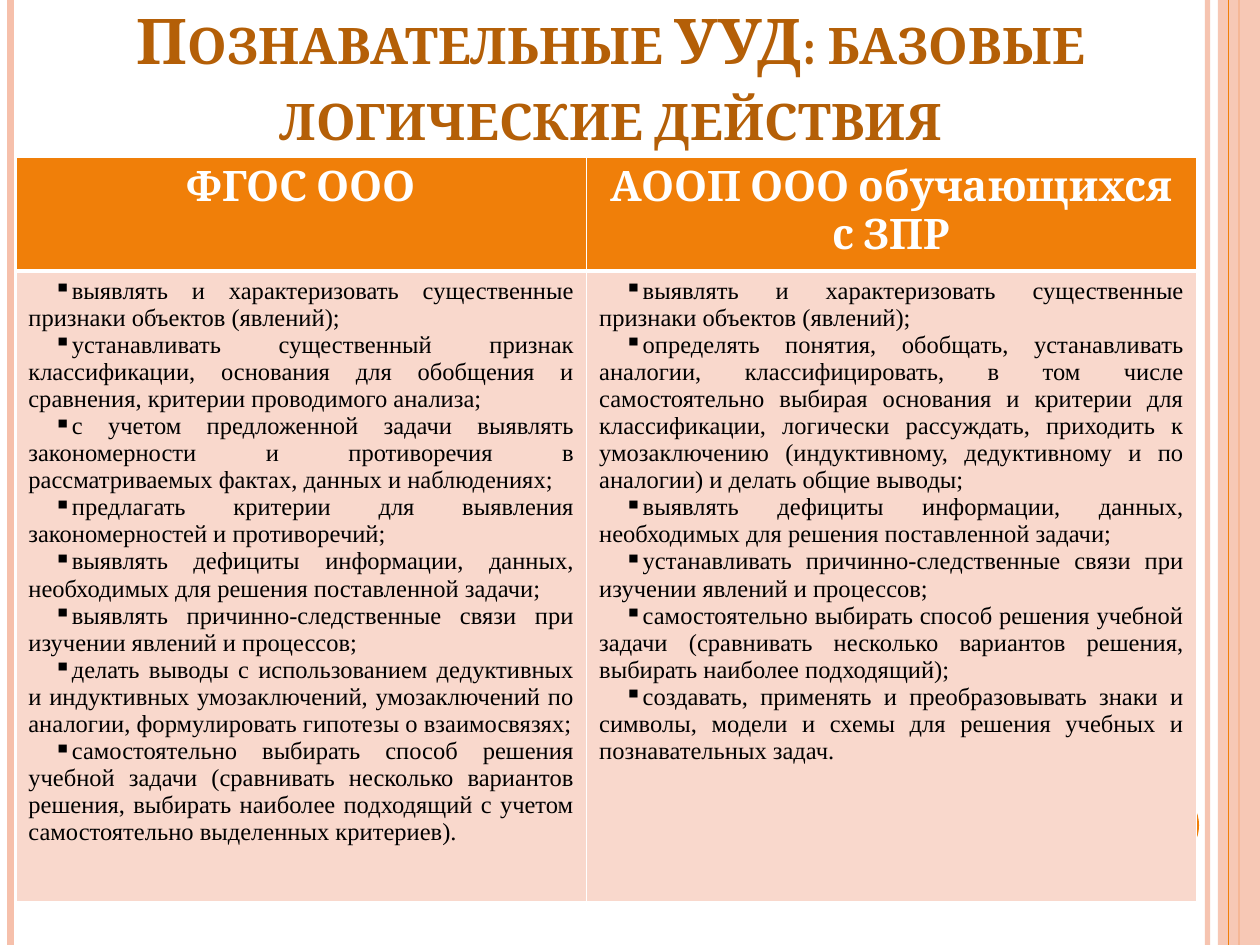
from lxml import etree
from pptx import Presentation
from pptx.dml.color import RGBColor
from pptx.enum.shapes import MSO_CONNECTOR, MSO_SHAPE
from pptx.enum.text import MSO_ANCHOR, PP_ALIGN
from pptx.oxml.ns import qn
from pptx.util import Pt

CENTER, JUSTIFY = PP_ALIGN.CENTER, PP_ALIGN.JUSTIFY
BOTTOM = MSO_ANCHOR.BOTTOM
STRAIGHT = MSO_CONNECTOR.STRAIGHT
RECTANGLE, OVAL = MSO_SHAPE.RECTANGLE, MSO_SHAPE.OVAL

WIDTH, HEIGHT = 720, 540
ORANGE, PEACH, PALE = "F07F09", "F6C0AB", "F9D8CC"
BROWN, WHITE, BLACK = "B45F07", "FFFFFF", "000000"
HEAD_FONT, BODY_FONT = "Cambria", "Times New Roman"

TITLE = "Познавательные УУД: базовые логические действия"
COLUMNS = [
    ("ФГОС ООО", 326.2, [
        "выявлять и характеризовать существенные признаки объектов (явлений);",
        "устанавливать существенный признак классификации, основания для обобщения и "
        "сравнения, критерии проводимого анализа;",
        "с учетом предложенной задачи выявлять закономерности и противоречия в "
        "рассматриваемых фактах, данных и наблюдениях;",
        "предлагать критерии для выявления закономерностей и противоречий;",
        "выявлять дефициты информации, данных, необходимых для решения поставленной задачи;",
        "выявлять причинно-следственные связи при изучении явлений и процессов;",
        "делать выводы с использованием дедуктивных и индуктивных умозаключений, "
        "умозаключений по аналогии, формулировать гипотезы о взаимосвязях;",
        "самостоятельно выбирать способ решения учебной задачи (сравнивать несколько "
        "вариантов решения, выбирать наиболее подходящий с учетом самостоятельно "
        "выделенных критериев).",
    ]),
    ("АООП ООО обучающихся с ЗПР", 348.5, [
        "выявлять и характеризовать существенные признаки объектов (явлений);",
        "определять понятия, обобщать, устанавливать аналогии, классифицировать, в том "
        "числе самостоятельно выбирая основания и критерии для классификации, логически "
        "рассуждать, приходить к умозаключению (индуктивному, дедуктивному и по аналогии) "
        "и делать общие выводы;",
        "выявлять дефициты информации, данных, необходимых для решения поставленной задачи;",
        "устанавливать причинно-следственные связи при изучении явлений и процессов;",
        "самостоятельно выбирать способ решения учебной задачи (сравнивать несколько "
        "вариантов решения, выбирать наиболее подходящий);",
        "создавать, применять и преобразовывать знаки и символы, модели и схемы для "
        "решения учебных и познавательных задач.",
    ]),
]
ROW_HEIGHTS = (61.7, 360)
TABLE_LEFT, TABLE_TOP = 9, 90


def color(value):
    return RGBColor.from_string(value)


def set_opacity(element, percent):
    for tag in element.iter(qn("a:srgbClr")):
        etree.SubElement(tag, qn("a:alpha"), val=str(percent * 1000))


def add_stripe(x, hue, weight, opacity=None):
    """Draw a vertical line over the full slide height."""
    stripe = slide.shapes.add_connector(STRAIGHT, Pt(x), 0, Pt(x), Pt(HEIGHT))
    stripe.line.color.rgb = color(hue)
    stripe.line.width = Pt(weight)
    properties = stripe._element.spPr
    if opacity:
        set_opacity(properties, opacity)
    etree.SubElement(properties, qn("a:effectLst"))


def add_plain_shape(kind, left, top, width, height, hue):
    shape = slide.shapes.add_shape(kind, Pt(left), Pt(top), Pt(width), Pt(height))
    shape.shadow.inherit = False
    shape.fill.solid()
    shape.fill.fore_color.rgb = color(hue)
    shape.line.fill.background()
    return shape


def add_span(para, text, font, size, hue, bold):
    span = para.add_run()
    span.text = text
    span.font.name, span.font.size, span.font.bold = font, Pt(size), bold
    span.font.color.rgb = color(hue)
    return span


def style_cell(cell, fill, top, bottom):
    """Give a cell white borders, then its fill."""
    properties = cell._tc.get_or_add_tcPr()
    for side, weight in (("L", 1), ("R", 1), ("T", top), ("B", bottom)):
        border = etree.SubElement(properties, qn(f"a:ln{side}"), w=str(Pt(weight)))
        paint = etree.SubElement(border, qn("a:solidFill"))
        etree.SubElement(paint, qn("a:srgbClr"), val=WHITE)
    cell.fill.solid()
    cell.fill.fore_color.rgb = color(fill)


def add_bullet(para, indent):
    properties = para._p.get_or_add_pPr()
    properties.set("marL", "0")
    properties.set("indent", str(Pt(indent)))
    etree.SubElement(properties, qn("a:buChar"), char="▪")


deck = Presentation()
deck.slide_width, deck.slide_height = Pt(WIDTH), Pt(HEIGHT)
slide = deck.slides.add_slide(deck.slide_layouts[6])

add_stripe(690, PEACH, 3, 93)
add_stripe(6, PEACH, 4.5)
add_stripe(708, ORANGE, 1.5)
band = add_plain_shape(RECTANGLE, 696, 0, 24, HEIGHT, PEACH)
set_opacity(band._element.spPr, 87)
add_stripe(702, ORANGE, 0.75)
add_plain_shape(OVAL, 642, 450, 43.2, 43.2, ORANGE)

title_box = slide.shapes.add_textbox(Pt(9), Pt(1), Pt(680), Pt(90))
title_frame = title_box.text_frame
title_frame.word_wrap = True
title_frame.vertical_anchor = BOTTOM
title_para = title_frame.paragraphs[0]
title_para.alignment = CENTER
title_span = add_span(title_para, TITLE, HEAD_FONT, 36, BROWN, True)
title_span._r.get_or_add_rPr().set("cap", "small")

table = slide.shapes.add_table(
    len(ROW_HEIGHTS), len(COLUMNS), Pt(TABLE_LEFT), Pt(TABLE_TOP),
    Pt(sum(width for _, width, _ in COLUMNS)), Pt(sum(ROW_HEIGHTS))).table
for row, height in zip(table.rows, ROW_HEIGHTS):
    row.height = Pt(height)
for index, (heading, width, actions) in enumerate(COLUMNS):
    table.columns[index].width = Pt(width)
    head, body = table.cell(0, index), table.cell(1, index)
    style_cell(head, ORANGE, 1, 3)
    style_cell(body, PALE, 3, 1)
    head_para = head.text_frame.paragraphs[0]
    head_para.alignment = CENTER
    add_span(head_para, heading, HEAD_FONT, 24, WHITE, True)
    frame = body.text_frame
    for number, action in enumerate(actions):
        para = frame.add_paragraph() if number else frame.paragraphs[0]
        para.alignment = JUSTIFY
        add_bullet(para, 14.4)
        add_span(para, action, BODY_FONT, 14, BLACK, False)

deck.save("out.pptx")
